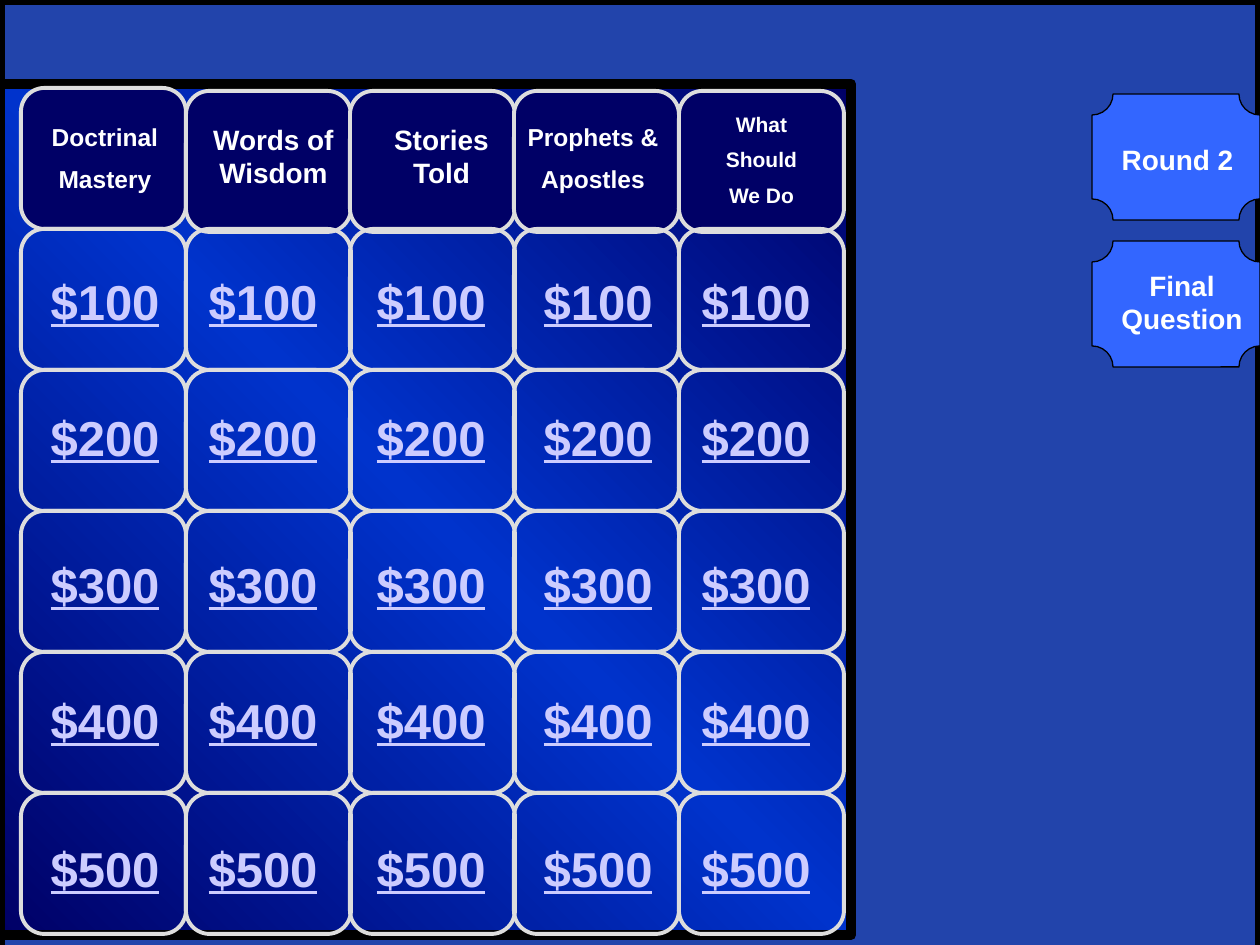
from copy import deepcopy

from lxml import etree
from pptx import Presentation
from pptx import util as u
from pptx.dml.color import RGBColor
from pptx.enum import shapes, text
from pptx.oxml.ns import qn

PX = 914400 / 126

BLACK = RGBColor(0x00, 0x00, 0x00)
WHITE = RGBColor(0xFF, 0xFF, 0xFF)
NAVY = RGBColor(0x00, 0x00, 0x66)
ROYAL = RGBColor(0x00, 0x33, 0xCC)
BRIGHT = RGBColor(0x33, 0x66, 0xFF)
SILVER = RGBColor(0xDD, 0xDD, 0xDD)
LAVENDER = RGBColor(0xCC, 0xCC, 0xFF)

COLUMNS, ROWS = 5, 5
CELL_LEFT, CELL_TOP, CELL_WIDTH, CELL_HEIGHT = 21, 229, 165, 141
COLUMN_STEP = 164.5
HEADER_TOPS = (88, 91, 91, 91, 91)
AMOUNT_LEFTS = (21, 179, 347, 514, 672)
AMOUNT_TOPS = (265, 401, 548, 684, 832)

# lines, place, font size, space before in percent of a line, wrapping
HEADINGS = [
    (["Doctrinal", "Mastery"], (21, 116, 168, 87), 14, 50, True),
    (["Words of", "Wisdom"], (179, 116, 189, 81), 16, 0, True),
    (["Stories", "Told"], (381, 116, 121, 81), 16, 0, False),
    (["Prophets &", "Apostles"], (514, 116, 158, 87), 14, 50, True),
    (["What", "Should", "We Do"], (672, 105, 179, 115), 12, 50, True),
]
BUTTONS = [
    ("Round 2", 94, (1091, 136, 173, 47)),
    ("Final Question", 241, (1103, 262, 158, 81)),
]


def emu(place):
    return [u.Emu(round(length * PX)) for length in place]


def add_panel(page, kind, place, fill, line, line_width):
    """Add a preset shape; a fill of None leaves it hollow."""
    panel = page.shapes.add_shape(kind, *emu(place))
    panel.shadow.inherit = False
    if fill is None:
        panel.fill.background()
    else:
        panel.fill.solid()
        panel.fill.fore_color.rgb = fill
    panel.line.color.rgb = line
    panel.line.width = u.Pt(line_width)
    return panel


def set_opacity(panel, percent):
    color = panel.fill._xPr.find(qn("a:solidFill"))[0]
    etree.SubElement(color, qn("a:alpha"), val=str(percent * 1000))


def set_gradient(panel, stops, angle):
    """Fill with (percent, colour) stops; the angle runs counter-clockwise."""
    panel.fill.gradient()
    panel.fill.gradient_angle = angle
    stop_list = panel.fill._xPr.find(qn("a:gradFill")).find(qn("a:gsLst"))
    while len(stop_list) < len(stops):
        stop_list.append(deepcopy(stop_list[0]))
    for stop, (percent, color) in zip(panel.fill.gradient_stops, stops):
        stop.color.rgb = color
        stop.position = percent / 100


def set_space_before(para, percent):
    spacing = etree.SubElement(para._p.get_or_add_pPr(), qn("a:spcBef"))
    etree.SubElement(spacing, qn("a:spcPct"), val=str(percent * 1000))


def add_label(page, lines, place, size, color=WHITE, before=50, wrap=True,
              underline=None):
    box = page.shapes.add_textbox(*emu(place))
    frame = box.text_frame
    frame.word_wrap = wrap
    frame.auto_size = text.MSO_AUTO_SIZE.SHAPE_TO_FIT_TEXT
    font_format = {"name": "Arial", "size": u.Pt(size), "bold": True,
                   "underline": underline}
    for index, line in enumerate(lines):
        para = frame.add_paragraph() if index else frame.paragraphs[0]
        para.alignment = text.PP_ALIGN.CENTER
        set_space_before(para, before)
        span = para.add_run()
        span.text = line
        for name, value in font_format.items():
            setattr(span.font, name, value)
        span.font.color.rgb = color


def add_cell(page, column, top, fill=None):
    left = round(CELL_LEFT + column * COLUMN_STEP)
    cell = add_panel(page, shapes.MSO_SHAPE.ROUNDED_RECTANGLE,
                     (left, top, CELL_WIDTH, CELL_HEIGHT), fill, SILVER, 2.25)
    cell.adjustments[0] = 0.167


def add_backdrop(page):
    rectangle = shapes.MSO_SHAPE.RECTANGLE
    add_panel(page, rectangle, (0, 0, 1260, 945), BLACK, BLACK, 0.75)
    tint = add_panel(page, rectangle, (0, 0, 1260, 955), BRIGHT, BLACK, 6)
    set_opacity(tint, 67)
    board = add_panel(page, rectangle, (0, 84, 851, 851), NAVY, BLACK, 6)
    set_gradient(board, [(0, NAVY), (50, ROYAL), (100, NAVY)], 45)


def add_headings(page):
    for column, top in enumerate(HEADER_TOPS):
        add_cell(page, column, top, NAVY)
    for lines, place, size, before, wrap in HEADINGS:
        add_label(page, lines, place, size, before=before, wrap=wrap)


def add_amounts(page):
    for row in range(ROWS):
        for column in range(COLUMNS):
            add_cell(page, column, CELL_TOP + row * CELL_HEIGHT)
            place = (AMOUNT_LEFTS[column], AMOUNT_TOPS[row], 168, 72)
            add_label(page, [f"${(row + 1) * 100}"], place, 28, LAVENDER,
                      underline=True)


def add_buttons(page):
    for caption, top, place in BUTTONS:
        button = add_panel(page, shapes.MSO_SHAPE.PLAQUE,
                           (1092, top, 168, 126), BRIGHT, BLACK, 0.75)
        button.adjustments[0] = 0.167
        add_label(page, [caption], place, 16)


def main():
    deck = Presentation()
    deck.slide_width, deck.slide_height = emu((1260, 945))
    page = deck.slides.add_slide(deck.slide_layouts[6])
    add_backdrop(page)
    add_headings(page)
    add_amounts(page)
    add_buttons(page)
    deck.save("out.pptx")


if __name__ == "__main__":
    main()
